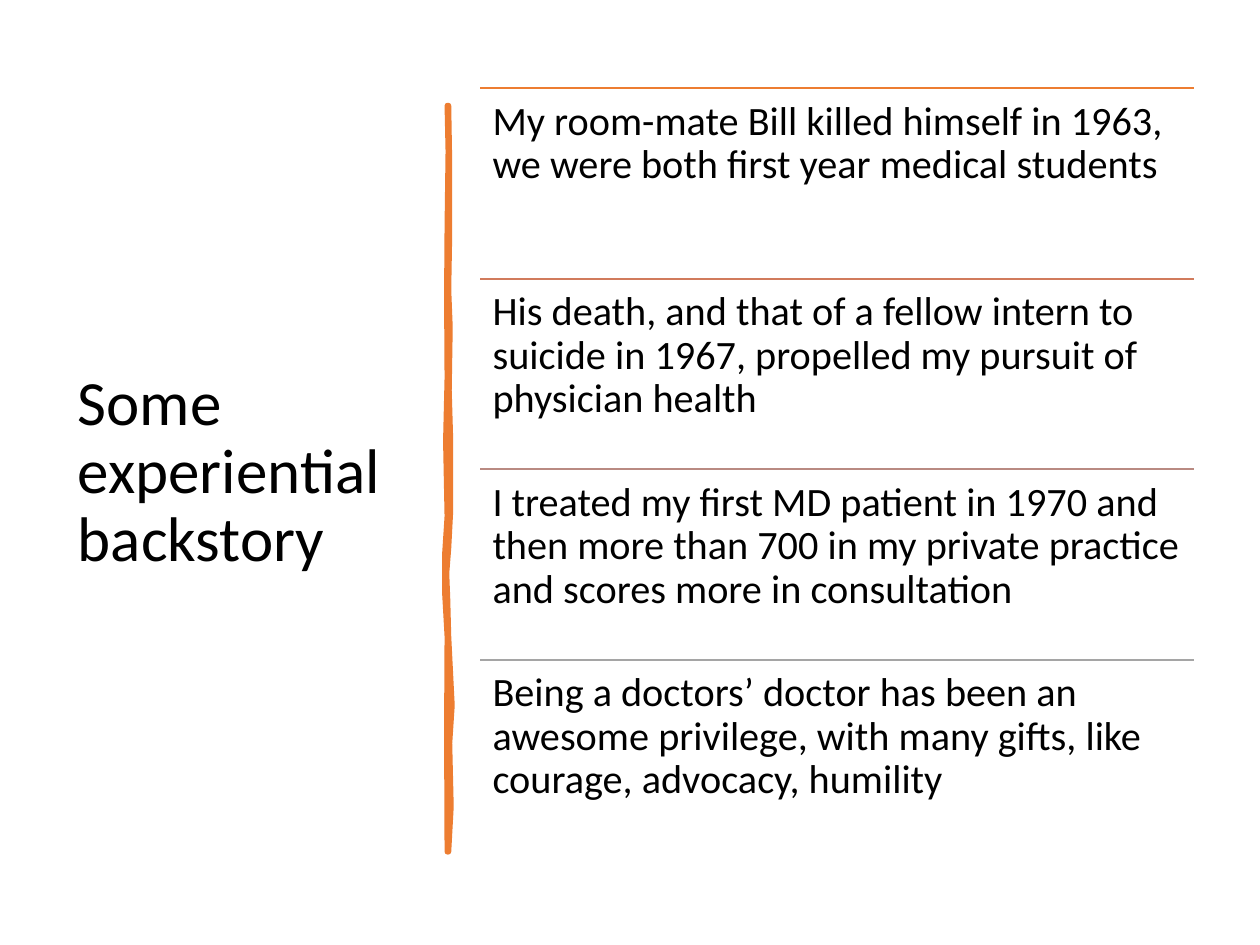
from lxml import etree
from pptx import Presentation, util as u
from pptx.dml.color import RGBColor
from pptx.enum import shapes, text
from pptx.oxml.ns import qn

BLACK = RGBColor(0x00, 0x00, 0x00)
ORANGE = RGBColor(0xED, 0x7D, 0x31)
RUST = RGBColor(0xD1, 0x7B, 0x5C)
ROSE = RGBColor(0xB9, 0x8A, 0x82)
GRAY = RGBColor(0xA5, 0xA5, 0xA5)

STORY = [
    (ORANGE, "My room-mate Bill killed himself in 1963, we were both first year medical students"),
    (RUST, "His death, and that of a fellow intern to suicide in 1967, propelled my pursuit of physician health"),
    (ROSE, "I treated my first MD patient in 1970 and then more than 700 in my private practice "
           "and scores more in consultation"),
    (GRAY, "Being a doctors’ doctor has been an awesome privilege, with many gifts, like courage, "
           "advocacy, humility"),
]
STORY_LEFT, STORY_TOP, STORY_WIDTH, ROW_HEIGHT = 9.68, 1.78, 14.38, 3.84

# Edges of the brush stroke, top to bottom, in hundredths of a centimetre
STROKE_LEFT = [(902, 213), (904, 305), (902, 457), (901, 597), (902, 762), (899, 889),
               (902, 1041), (897, 1118), (897, 1194), (902, 1283), (901, 1473), (902, 1717)]
STROKE_RIGHT = [(904, 213), (906, 330), (906, 470), (904, 584), (907, 660), (905, 787),
                (908, 889), (908, 1029), (904, 1105), (900, 1156), (902, 1207), (904, 1283),
                (911, 1422), (906, 1499), (909, 1626), (904, 1717)]


class SlideBuilder:
    font = "Calibri"
    color = BLACK
    line_spacing = 0.9

    def __init__(self, slide):
        self.slide = slide

    def text_box(self, content, left, top, width, height, size, anchor, inset):
        """Add wrapped text; inset is the top and bottom margin."""
        box = self.slide.shapes.add_textbox(u.Cm(left), u.Cm(top), u.Cm(width), u.Cm(height))
        frame = box.text_frame
        frame.text = content
        frame.word_wrap = True
        frame.vertical_anchor = anchor
        frame.margin_left = frame.margin_right = u.Cm(0.25)
        frame.margin_top = frame.margin_bottom = u.Cm(inset)
        paragraph = frame.paragraphs[0]
        paragraph.line_spacing = self.line_spacing
        font = paragraph.runs[0].font
        font.name = self.font
        font.size = u.Pt(size)
        font.color.rgb = self.color

    def rule(self, left, top, width, color):
        line = self.slide.shapes.add_connector(
            shapes.MSO_CONNECTOR.STRAIGHT,
            u.Cm(left), u.Cm(top), u.Cm(left + width), u.Cm(top))
        line.line.color.rgb = color
        line.line.width = u.Pt(1)
        etree.SubElement(line._element.spPr, qn("a:effectLst"))

    def brush_stroke(self, left_edge, right_edge, color):
        outline = right_edge + left_edge[::-1]
        builder = self.slide.shapes.build_freeform(*outline[0], scale=u.Cm(0.01))
        builder.add_line_segments(outline[1:], close=True)
        stroke = builder.convert_to_shape()
        stroke.shadow.inherit = False
        stroke.fill.solid()
        stroke.fill.fore_color.rgb = color
        stroke.line.color.rgb = color
        stroke.line.width = u.Pt(3.25)


def main():
    presentation = Presentation()
    presentation.slide_width, presentation.slide_height = u.Cm(25.4), u.Cm(19.05)
    builder = SlideBuilder(presentation.slides.add_slide(presentation.slide_layouts[6]))

    builder.text_box("Some experiential backstory", 1.32, 1.78, 7.11, 15.52,
                     36, text.MSO_ANCHOR.MIDDLE, 0.13)
    builder.brush_stroke(STROKE_LEFT, STROKE_RIGHT, ORANGE)
    for row, (color, content) in enumerate(STORY):
        top = STORY_TOP + row * ROW_HEIGHT
        builder.rule(STORY_LEFT, top, STORY_WIDTH, color)
        builder.text_box(content, STORY_LEFT, top, STORY_WIDTH, ROW_HEIGHT,
                         23, text.MSO_ANCHOR.TOP, 0.25)

    presentation.save("out.pptx")


if __name__ == "__main__":
    main()
